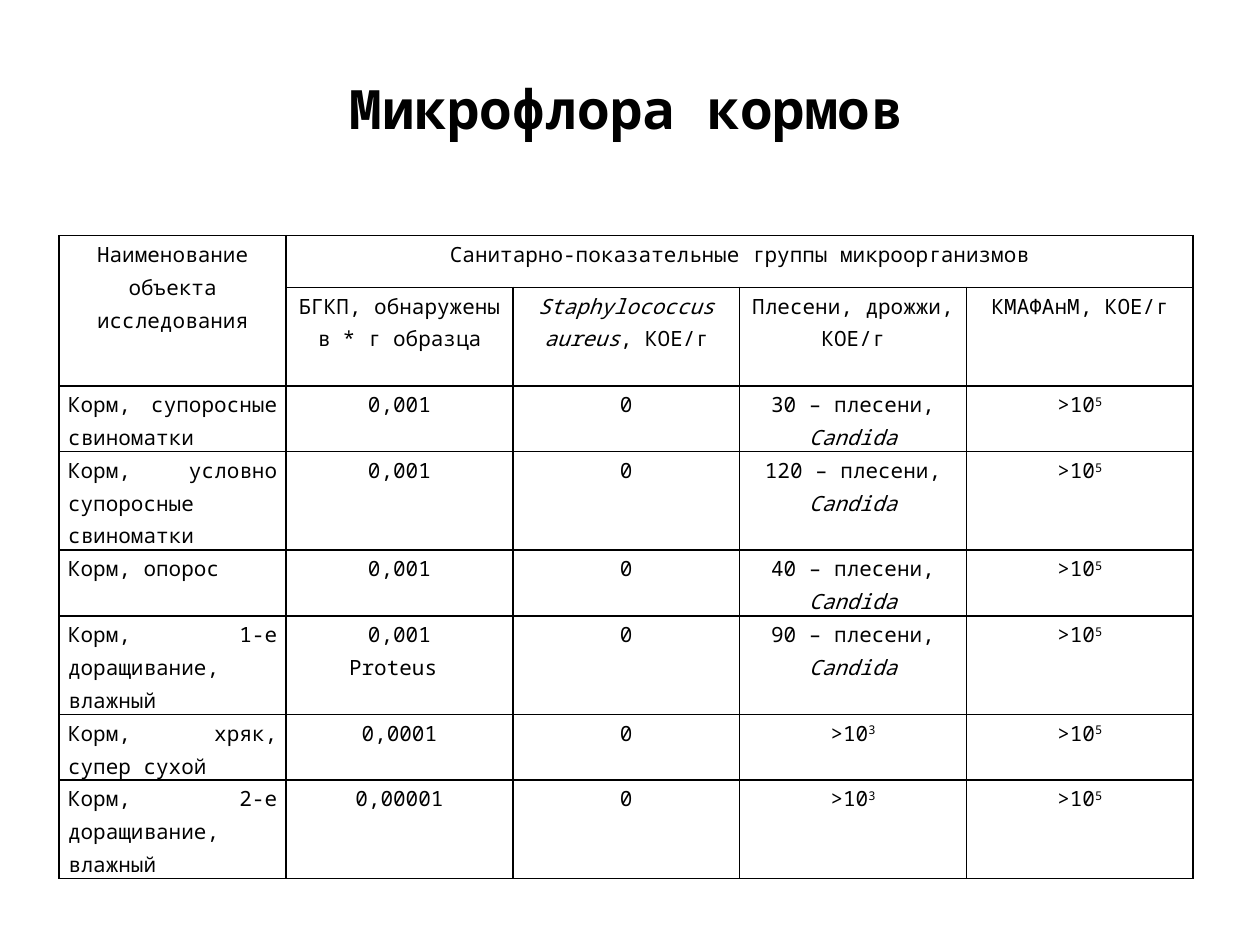
import lxml.etree
import pptx
import pptx.dml.color
import pptx.enum.text
import pptx.oxml.ns
import pptx.util

Inches, Pt = pptx.util.Inches, pptx.util.Pt
ALIGN = pptx.enum.text.PP_ALIGN
COLORS = {"text": "000000", "border": "000000"}


def add_run(p, text, size=12, color="text", font="Noto Sans Mono",
            bold=False, italic=False, raised=False):
    r = p.add_run()
    r.text = text
    r.font.name = font
    r.font.size = Pt(size)
    r.font.bold = bold
    r.font.italic = italic
    r.font.color.rgb = pptx.dml.color.RGBColor.from_string(COLORS[color])
    if raised:
        r.font._element.set("baseline", "30000")
    return r


def set_borders(cell, width=1):
    tc_pr = cell._tc.get_or_add_tcPr()
    for side in ("lnL", "lnR", "lnT", "lnB"):
        ln = lxml.etree.SubElement(tc_pr, pptx.oxml.ns.qn(f"a:{side}"), w=str(Pt(width)))
        fill = lxml.etree.SubElement(ln, pptx.oxml.ns.qn("a:solidFill"))
        lxml.etree.SubElement(fill, pptx.oxml.ns.qn("a:srgbClr"), val=COLORS["border"])


class SlideBuilder:
    def __init__(self, prs):
        self.slide = prs.slides.add_slide(prs.slide_layouts[6])
        self.left, self.width = Inches(0.47), Inches(9)

    def title(self, text, top, height):
        sp = self.slide.shapes.add_textbox(self.left, top, self.width, height)
        tf = sp.text_frame
        tf.word_wrap = True
        tf.vertical_anchor = pptx.enum.text.MSO_ANCHOR.TOP
        p = tf.paragraphs[0]
        p.alignment = ALIGN.CENTER
        add_run(p, text, size=31, bold=True)

    def cell(self, cell, paragraphs, align):
        """Fill a cell; each paragraph is a list of (text, format) runs."""
        cell.margin_left = cell.margin_right = Inches(0.07)
        cell.margin_top = cell.margin_bottom = 0
        set_borders(cell)
        cell.fill.background()
        tf = cell.text_frame
        for i, runs in enumerate(paragraphs):
            p = tf.add_paragraph() if i else tf.paragraphs[0]
            p.alignment = align
            p.line_spacing = 1.15
            for text, style in runs:
                add_run(p, text, **style)

    def table(self, rows, heights, top, header_rows):
        n_cols = len(rows[0])
        table = self.slide.shapes.add_table(
            len(rows), n_cols, self.left, top, self.width, Inches(sum(heights))).table
        table.first_row = table.horz_banding = False
        for col in table.columns:
            col.width = self.width // n_cols
        for i, (row, height) in enumerate(zip(rows, heights)):
            table.rows[i].height = Inches(height)
            for j, paragraphs in enumerate(row):
                is_name = j == 0 and i >= header_rows
                self.cell(table.cell(i, j), paragraphs,
                          ALIGN.JUSTIFY if is_name else ALIGN.CENTER)
        return table


def plain(*lines):
    return [[(line, {})] for line in lines]


def over_ten_to(power):
    return [[(">10", {}), (power, {"raised": True})]]


def mold(count):
    return plain(f"{count} – плесени,") + [[("Candida", {"italic": True})]]


def feed_row(name, coliforms, fungi):
    return [plain(name), coliforms, plain("0"), fungi, over_ten_to("5")]


HEADER = [
    [plain("Наименование объекта исследования"),
     plain("Санитарно-показательные группы микроорганизмов"), [], [], []],
    [[],
     plain("БГКП, обнаружены в * г образца"),
     [[("Staphylococcus aureus", {"italic": True}), (", КОЕ/г", {})]],
     plain("Плесени, дрожжи, КОЕ/г"),
     plain("КМАФАнМ, КОЕ/г")],
]
FEEDS = [
    feed_row("Корм, супоросные свиноматки", plain("0,001"), mold(30)),
    feed_row("Корм, условно супоросные свиноматки", plain("0,001"), mold(120)),
    feed_row("Корм, опорос", plain("0,001"), mold(40)),
    feed_row("Корм, 1-е доращивание, влажный", plain("0,001", "Proteus "), mold(90)),
    feed_row("Корм, хряк, супер сухой", plain("0,0001"), over_ten_to("3")),
    feed_row("Корм, 2-е доращивание, влажный", plain("0,00001"), over_ten_to("3")),
]


def main():
    prs = pptx.Presentation()
    prs.slide_width, prs.slide_height = Inches(10), Inches(7.5)
    s = SlideBuilder(prs)
    heights = [0.41, 0.78] + [0.52, 0.78] * 3
    table = s.table(HEADER + FEEDS, heights, Inches(1.87), len(HEADER))
    table.cell(0, 0).merge(table.cell(1, 0))
    table.cell(0, 1).merge(table.cell(0, 4))
    s.title("Микрофлора кормов", Inches(0.55), Inches(1.25))
    prs.save("out.pptx")


if __name__ == "__main__":
    main()
